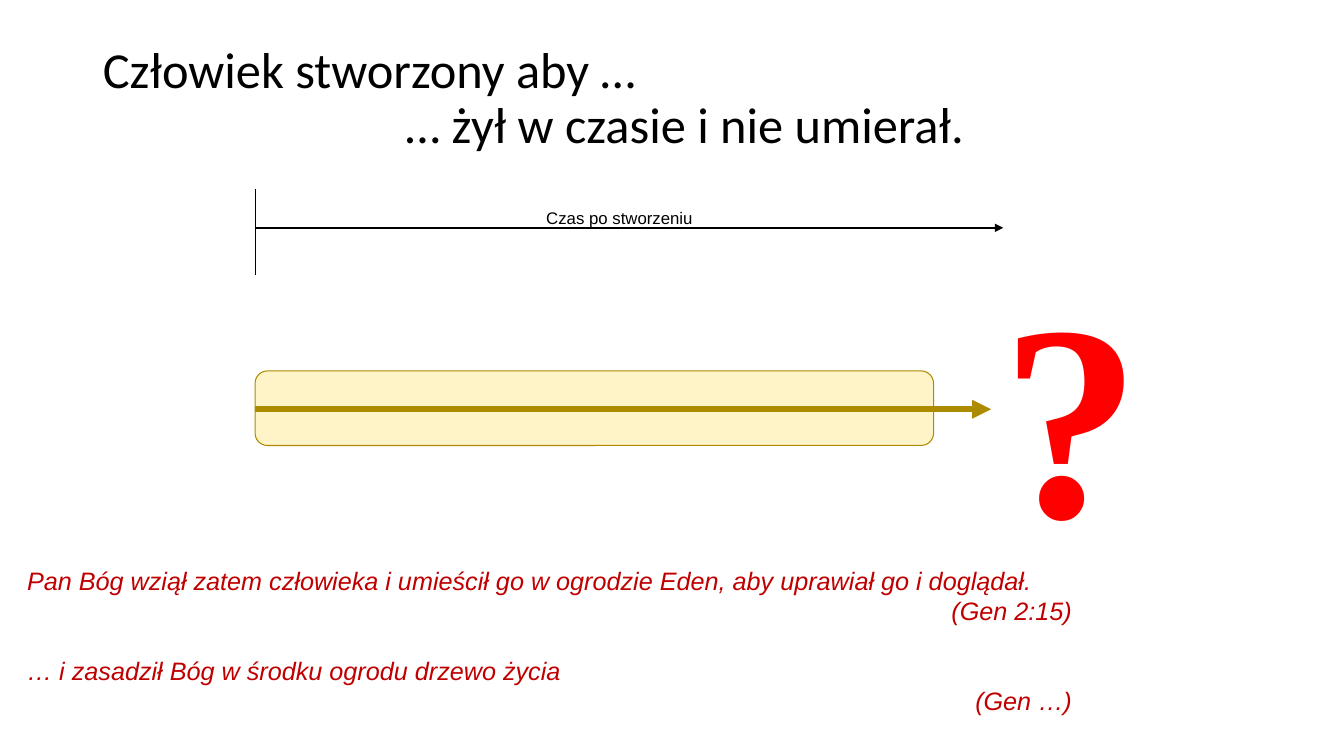
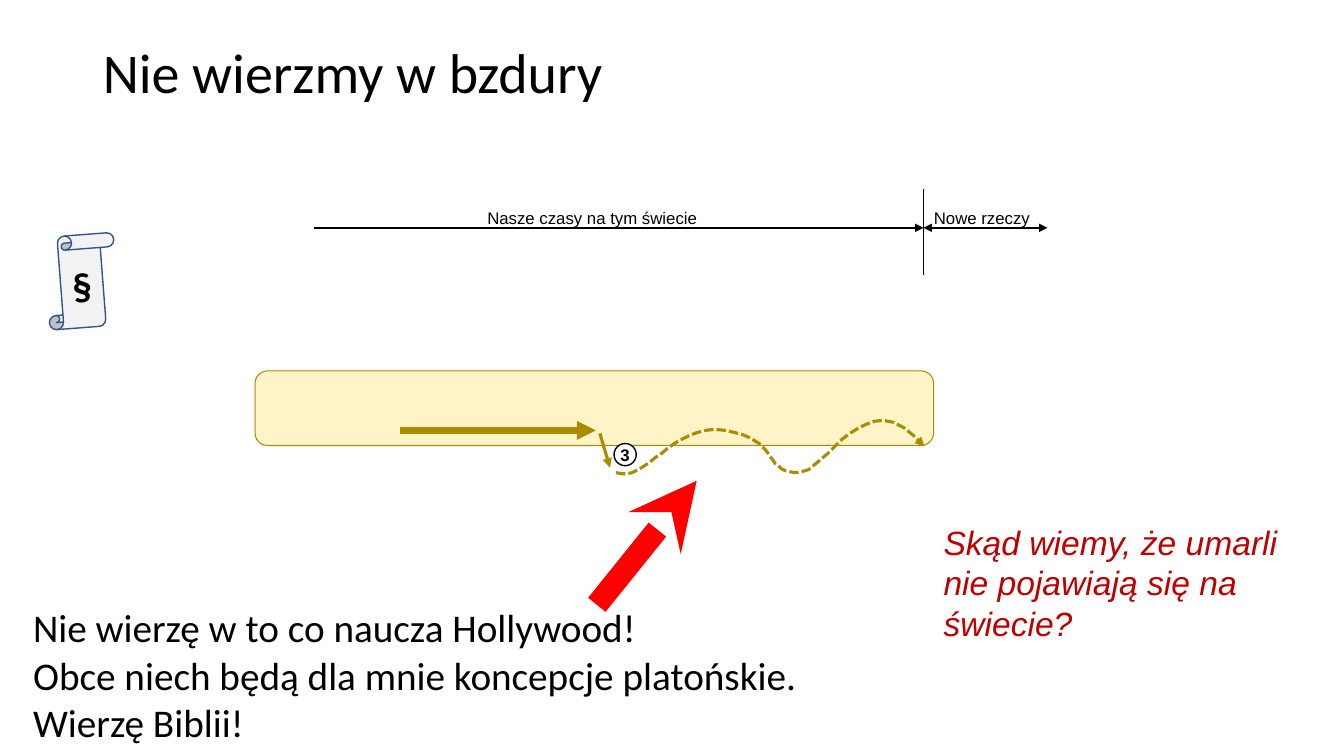
from dataclasses import dataclass

from lxml import etree
from pptx import Presentation
from pptx import util as u
from pptx.dml.color import RGBColor
from pptx.enum import dml, shapes, text
from pptx.oxml.ns import qn

EMU_PER_PX = 9144  # 100 px to the inch
TITLE_ONLY = 5
AXIS_Y = 226
NEW_ERA_X = 916
LEFT, CENTER, RIGHT = text.PP_ALIGN.LEFT, text.PP_ALIGN.CENTER, text.PP_ALIGN.RIGHT


@dataclass(frozen=True)
class Style:
    size: float
    font: str
    color: str = "000000"
    bold: bool = False
    italic: bool = False


@dataclass(frozen=True)
class Theme:
    black: str = "000000"
    white: str = "FFFFFF"
    gold: str = "AD8B00"
    cream: str = "FFF4C7"
    red: str = "FF0000"
    paper: str = "F2F2F2"
    ink: str = "325491"
    long_title: Style = Style(36, "Calibri")
    title: Style = Style(40, "Calibri")
    label: Style = Style(12, "Arial")
    number: Style = Style(12, "Arial", bold=True)
    quote: Style = Style(18, "Arial", "C00000", italic=True)
    question: Style = Style(24, "Arial", "C00000", italic=True)
    statement: Style = Style(28, "Calibri")
    paragraph_sign: Style = Style(28, "Calibri", bold=True)
    question_mark: Style = Style(199, "Times New Roman", "FF0000", bold=True)


THEME = Theme()


def px(*lengths):
    return [u.Emu(length * EMU_PER_PX) for length in lengths]


def write(frame, lines, style, align=LEFT):
    """Fill a frame with one paragraph per line and return the paragraphs."""
    paragraphs = []
    for index, line in enumerate(lines):
        paragraph = frame.add_paragraph() if index else frame.paragraphs[0]
        paragraph.alignment = align
        run = paragraph.add_run()
        run.text = line
        font = run.font
        font.size, font.name = u.Pt(style.size), style.font
        font.bold, font.italic = style.bold, style.italic
        font.color.rgb = RGBColor.from_string(style.color)
        paragraphs.append(paragraph)
    return paragraphs


def set_margins(frame, margin):
    frame.margin_left = frame.margin_right = px(margin)[0]
    frame.margin_top = frame.margin_bottom = px(margin)[0]


def add_titled_slide(presentation, lines, style):
    slide = presentation.slides.add_slide(presentation.slide_layouts[TITLE_ONLY])
    title = slide.shapes.title
    title.left, title.top, title.width, title.height = px(92, 40, 1150, 78)
    frame = title.text_frame
    frame.auto_size = text.MSO_AUTO_SIZE.NONE
    frame.vertical_anchor = text.MSO_ANCHOR.TOP
    paragraphs = write(frame, lines, style)
    for paragraph in paragraphs:
        paragraph.line_spacing = 0.9
    for paragraph in paragraphs[1:]:
        properties = paragraph._p.get_or_add_pPr()
        properties.set("marL", str(px(300)[0]))
        properties.set("indent", "0")
    return slide


def add_text(slide, box, lines, style, align=LEFT):
    frame = slide.shapes.add_textbox(*px(*box)).text_frame
    frame.word_wrap = True
    return frame, write(frame, lines, style, align)


def add_axis_label(slide, left, width, line):
    frame, _ = add_text(slide, (left, 203, width, 26), [line], THEME.label, CENTER)
    frame.vertical_anchor = text.MSO_ANCHOR.MIDDLE
    set_margins(frame, 3)


def style_line(shape, color, width, head=None, tail=None, dash=None):
    line = shape.line
    line.color.rgb = RGBColor.from_string(color)
    line.width = u.Pt(width)
    if dash:
        line.dash_style = dash
    outline = shape._element.spPr.find(qn("a:ln"))
    for tag, kind in (("a:headEnd", head), ("a:tailEnd", tail)):
        if kind:
            etree.SubElement(outline, qn(tag), type=kind)


def add_line(slide, start, end, color, width, head=None, tail=None):
    connector = slide.shapes.add_connector(
        shapes.MSO_CONNECTOR.STRAIGHT, *px(*start, *end))
    style_line(connector, color, width, head, tail)
    etree.SubElement(connector._element.spPr, qn("a:effectLst"))


def add_time_axis(slide, left, right, head=None):
    add_line(slide, (left, AXIS_Y), (right, AXIS_Y), THEME.black, 1.5, head, "triangle")


def add_time_mark(slide, x):
    add_line(slide, (x, 188), (x, 273), THEME.black, 0.5)


def add_life_arrow(slide, left, right, y):
    add_line(slide, (left, y), (right, y), THEME.gold, 4.5, tail="triangle")


def add_shape(slide, kind, box, fill, color, width):
    shape = slide.shapes.add_shape(kind, *px(*box))
    shape.shadow.inherit = False
    shape.fill.solid()
    shape.fill.fore_color.rgb = RGBColor.from_string(fill)
    style_line(shape, color, width)
    return shape


def add_symbol(shape, symbol, style):
    frame = shape.text_frame
    frame.word_wrap = False
    frame.vertical_anchor = text.MSO_ANCHOR.MIDDLE
    set_margins(frame, 0)
    write(frame, [symbol], style, CENTER)


def add_life_band(slide):
    add_shape(slide, shapes.MSO_SHAPE.ROUNDED_RECTANGLE, (253, 368, 673, 74),
              THEME.cream, THEME.gold, 0.75)


def curve_points(start, segments, steps=16):
    """Sample a chain of cubic Bezier segments."""
    points = [start]
    for first, second, end in segments:
        for step in range(1, steps + 1):
            t = step / steps
            weights = ((1 - t) ** 3, 3 * t * (1 - t) ** 2, 3 * t * t * (1 - t), t ** 3)
            corners = (start, first, second, end)
            points.append(tuple(
                sum(weight * corner[axis] for weight, corner in zip(weights, corners))
                for axis in (0, 1)))
        start = end
    return points


def add_open_path(slide, points, dash=None):
    builder = slide.shapes.build_freeform(*points[0], scale=float(EMU_PER_PX))
    builder.add_line_segments(points[1:], close=False)
    shape = builder.convert_to_shape()
    shape.shadow.inherit = False
    shape.fill.background()
    style_line(shape, THEME.gold, 2.25, tail="triangle", dash=dash)


def build_creation_slide(presentation):
    slide = add_titled_slide(
        presentation,
        ["Człowiek stworzony aby …", "… żył w czasie i nie umierał."],
        THEME.long_title)
    add_life_band(slide)
    add_life_arrow(slide, 253, 983, 406)
    add_time_axis(slide, 253, 995)
    add_axis_label(slide, 463, 303, "Czas po stworzeniu")
    add_time_mark(slide, 253)
    _, paragraphs = add_text(slide, (17, 556, 1056, 162), [
        "Pan Bóg wziął zatem człowieka i umieścił go w ogrodzie Eden, "
        "aby uprawiał go i doglądał.",
        "(Gen 2:15)",
        "… i zasadził Bóg w środku ogrodu drzewo życia",
        "(Gen …)",
    ], THEME.quote)
    for reference in paragraphs[1::2]:
        reference.alignment = RIGHT
    paragraphs[2].space_before = u.Pt(21)
    add_text(slide, (983, 232, 142, 345), ["?"], THEME.question_mark)


def build_belief_slide(presentation):
    slide = add_titled_slide(presentation, ["Nie wierzmy w bzdury"], THEME.title)
    add_life_band(slide)
    add_life_arrow(slide, 397, 591, 427)
    add_time_axis(slide, 311, NEW_ERA_X)
    add_axis_label(slide, 463, 249, "Nasze czasy na tym świecie")
    add_open_path(slide, [(595, 430), (605, 464)])
    add_time_mark(slide, NEW_ERA_X)
    add_axis_label(slide, NEW_ERA_X, 116, "Nowe rzeczy")
    add_time_axis(slide, NEW_ERA_X, 1039, head="triangle")
    add_line(slide, (592, 600), (691, 477), THEME.red, 16, tail="stealth")
    add_text(slide, (23, 594, 1005, 151), [
        "Nie wierzę w to co naucza Hollywood!",
        "Obce niech będą dla mnie koncepcje platońskie.",
        "Wierzę Biblii!",
    ], THEME.statement)
    scroll = add_shape(slide, shapes.MSO_SHAPE.VERTICAL_SCROLL, (46, 233, 70, 92),
                       THEME.paper, THEME.ink, 1)
    scroll.adjustments[0] = 0.2
    scroll.rotation = -4.4
    add_symbol(scroll, "§", THEME.paragraph_sign)
    badge = add_shape(slide, shapes.MSO_SHAPE.OVAL, (609, 440, 22, 22),
                      THEME.white, THEME.black, 1)
    add_symbol(badge, "3", THEME.number)
    wave = curve_points((611, 469), [
        ((641, 481), (665, 419), (719, 427)),
        ((773, 435), (756, 466), (789, 469)),
        ((822, 471), (857, 372), (917, 443)),
    ])
    add_open_path(slide, wave, dml.MSO_LINE.SQUARE_DOT)
    add_text(slide, (926, 513, 360, 131),
             ["Skąd wiemy, że umarli nie pojawiają się na świecie?"], THEME.question)


def main():
    presentation = Presentation()
    presentation.slide_width, presentation.slide_height = px(1333, 750)
    build_creation_slide(presentation)
    build_belief_slide(presentation)
    presentation.save("out.pptx")


if __name__ == "__main__":
    main()
